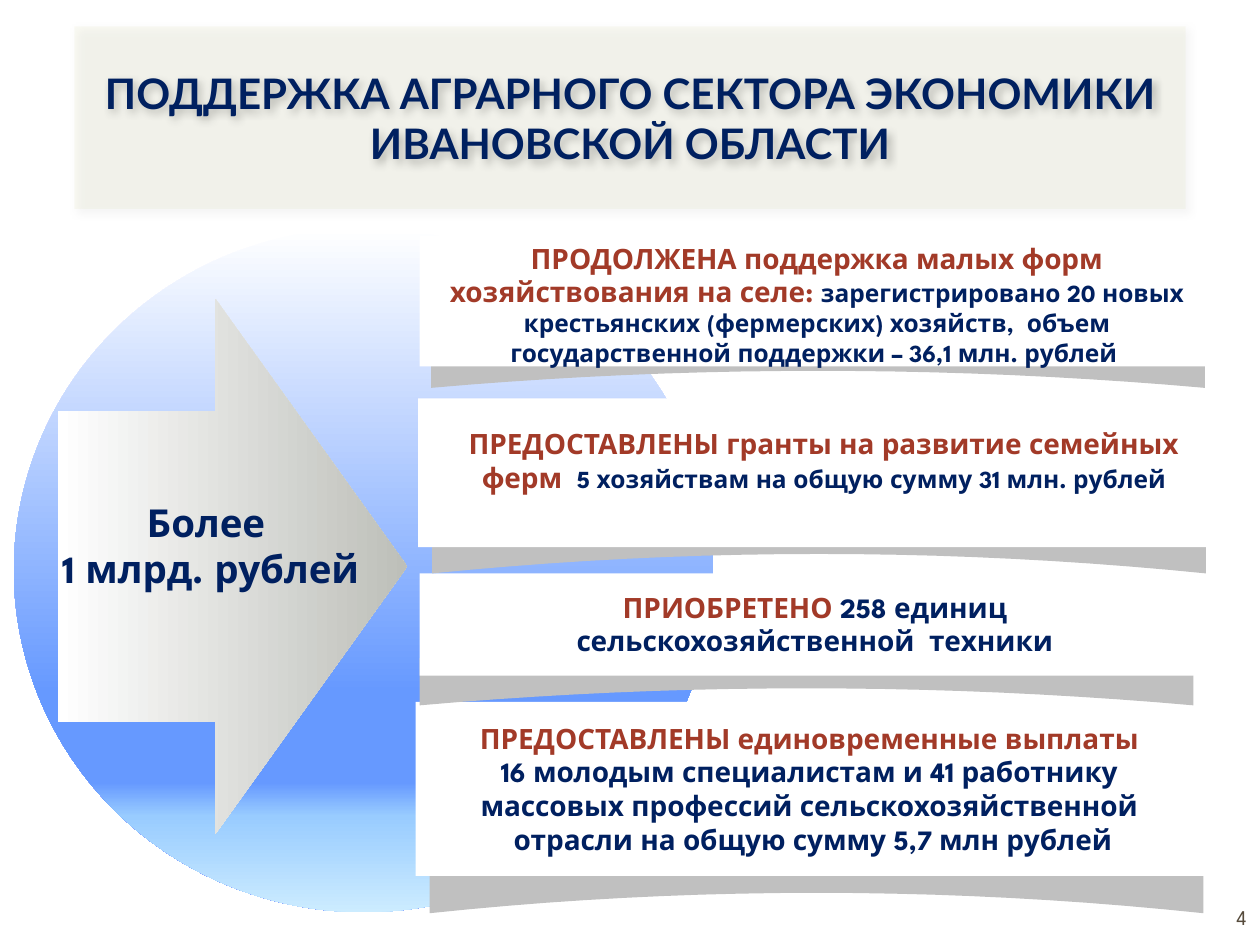
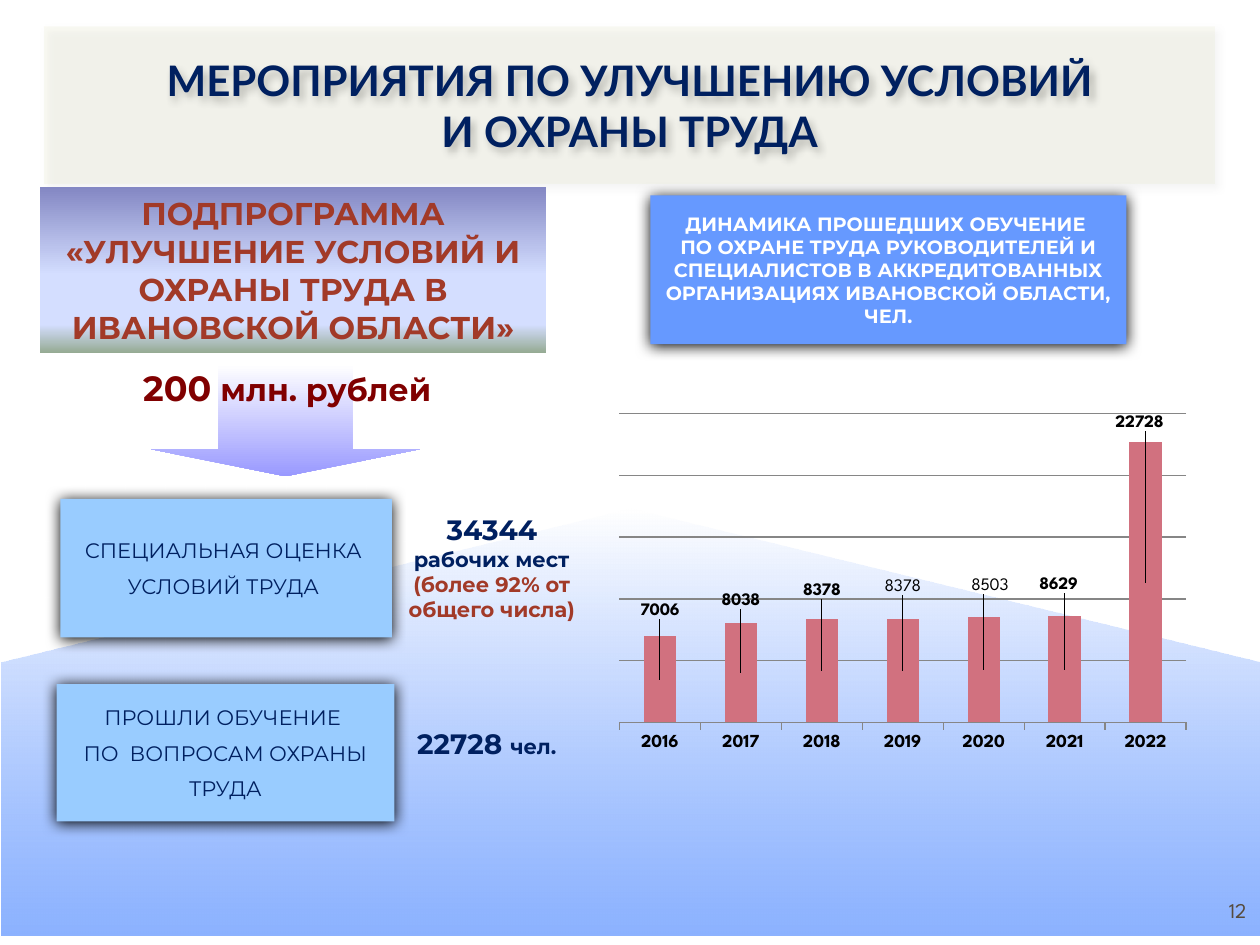
from lxml import etree
from pptx import Presentation
from pptx.chart.data import CategoryChartData
from pptx.dml.color import RGBColor
from pptx.enum.chart import XL_CHART_TYPE, XL_TICK_LABEL_POSITION, XL_TICK_MARK
from pptx.enum.shapes import MSO_SHAPE
from pptx.enum.text import MSO_ANCHOR, MSO_AUTO_SIZE, PP_ALIGN
from pptx.oxml.ns import qn
from pptx.util import Cm, Pt

RECT, OVAL, PLATE = MSO_SHAPE.RECTANGLE, MSO_SHAPE.OVAL, MSO_SHAPE.PENTAGON
RIGHT_ARROW, DOWN_ARROW = MSO_SHAPE.RIGHT_ARROW, MSO_SHAPE.DOWN_ARROW
TOP, MIDDLE = MSO_ANCHOR.TOP, MSO_ANCHOR.MIDDLE
CENTER, RIGHT = PP_ALIGN.CENTER, PP_ALIGN.RIGHT
STACKED = XL_CHART_TYPE.COLUMN_STACKED

COLORS = {
    "navy": "002060", "brick": "A23A28", "maroon": "800000", "brown": "564B3C",
    "white": "FFFFFF", "black": "000000", "silver": "C0C0C0", "grid": "868686",
    "khaki": "DFE0B1", "blue": "6699FF", "sky": "99CCFF", "ice": "CCECFF",
    "stone": "BDBFB9", "violet": "9999FF", "slate": "8488C4", "pale": "D4DEFF",
    "sage": "96AB94", "rose": "D1717F",
}

SPARTAN, MONT = "League Spartan", "Montserrat"
STYLES = {
    "title": ("Lato", 24, True, "navy"),
    "page": (SPARTAN, 12, False, "brown"),
    "lead": (SPARTAN, 16, True, "brick"),
    "fact": (SPARTAN, 16, True, "navy"),
    "detail": (SPARTAN, 14, True, "navy"),
    "total": (SPARTAN, 22, True, "navy"),
    "program": (MONT, 18, True, "brick"),
    "sum": (MONT, 20, True, "maroon"),
    "sum_unit": (MONT, 18, True, "maroon"),
    "header": (MONT, 11, True, "white"),
    "step": (MONT, 12, False, "navy"),
    "count": (MONT, 16, True, "navy"),
    "count_unit": (MONT, 12, True, "navy"),
    "count_note": (MONT, 12, True, "brick"),
}

TITLE_SHADOW = {"color": "black", "alpha": 30, "blur": 4.5, "dist": 2.6, "dir": 53}
BOX_SHADOW = {"color": "black", "alpha": 100, "blur": 8.5, "dist": 1, "dir": 90}

GLOBE = [(0, "white"), (68, "blue"), (81, "blue"), (86, "sky"), (100, "ice")]
METAL = [(0, "white"), (100, "stone")]
HILL = [(0, "blue", 75), (100, "white")]
FADE = [(0, "white"), (100, "violet")]
PROGRAM = [(0, "slate"), (53, "pale"), (83, "pale"), (100, "sage")]

AGRO = {"title": ["ПОДДЕРЖКА АГРАРНОГО СЕКТОРА ЭКОНОМИКИ ИВАНОВСКОЙ ОБЛАСТИ"],
        "title_at": (1.5, 0.53, 22.4, 3.68), "page": "4", "page_top": 17.98}
LABOUR = {"title": ["МЕРОПРИЯТИЯ ПО УЛУЧШЕНИЮ УСЛОВИЙ", "И ОХРАНЫ ТРУДА"],
          "title_at": (0.89, 0.53, 23.6, 3.18), "page": "12", "page_top": 17.83}

SHADE_WIDTH = 15.6
MEASURES = [
    {"card": (8.46, 4.75, 16, 2.64), "shade": (8.69, 6.55, SHADE_WIDTH, 1.27),
     "text": (8.33, 4.72, 16.28, 2.82),
     "paras": [[("ПРОДОЛЖЕНА поддержка малых форм хозяйствования на селе: ", "lead"),
                ("зарегистрировано 20 новых крестьянских (фермерских) хозяйств,  "
                 "объем государственной поддержки – 36,1 млн. рублей ", "detail")]]},
    {"card": (8.43, 8.03, 16.2, 3), "shade": (8.71, 10.11, SHADE_WIDTH, 1.45),
     "text": (8.71, 8.46, 15.8, 1.63),
     "paras": [[("ПРЕДОСТАВЛЕНЫ гранты на развитие семейных ферм  ", "lead"),
                ("5 хозяйствам на общую сумму 31 млн. рублей", "detail")]]},
    {"card": (8.46, 11.56, 16.03, 2.06), "shade": (8.46, 12.95, SHADE_WIDTH, 1.27),
     "text": (8.43, 11.76, 16, 1.63),
     "paras": [[("ПРИОБРЕТЕНО ", "lead"), ("258 единиц", "fact")],
               [("сельскохозяйственной  техники", "fact")]]},
    {"card": (8.38, 14.15, 16.03, 3.51), "shade": (8.66, 16.89, SHADE_WIDTH, 1.52),
     "text": (8.38, 14.41, 16.03, 2.97),
     "paras": [[("ПРЕДОСТАВЛЕНЫ единовременные выплаты ", "lead")],
               [("16 молодым специалистам и 41 работнику ", "fact")],
               [("массовых профессий сельскохозяйственной ", "fact")],
               [("отрасли на общую сумму 5,7 млн рублей", "fact")]]},
]
TOTAL = [[("Более ", "total")], [("1 млрд. рублей", "total")]]

BOXES = [
    ((13.11, 3.94, 9.6, 3), "blue", 0.25, 0,
     [[("ДИНАМИКА ПРОШЕДШИХ ОБУЧЕНИЕ ", "header")],
      [("ПО ОХРАНЕ ТРУДА РУКОВОДИТЕЛЕЙ И СПЕЦИАЛИСТОВ В АККРЕДИТОВАННЫХ "
        "ОРГАНИЗАЦИЯХ ИВАНОВСКОЙ ОБЛАСТИ, ЧЕЛ.", "header")]]),
    ((1.22, 10.06, 6.68, 2.79), "sky", 0.13, 6,
     [[("СПЕЦИАЛЬНАЯ ОЦЕНКА ", "step")], [("УСЛОВИЙ ТРУДА ", "step")]]),
    ((1.14, 13.79, 6.81, 2.77), "sky", 0.13, 6,
     [[("ПРОШЛИ ОБУЧЕНИЕ ", "step")], [("ПО  ВОПРОСАМ ОХРАНЫ", "step")],
      [("ТРУДА", "step")]]),
]
PROGRAM_NAME = [[("ПОДПРОГРАММА «УЛУЧШЕНИЕ УСЛОВИЙ И ОХРАНЫ ТРУДА "
                  "В ИВАНОВСКОЙ ОБЛАСТИ»", "program")]]
NOTES = [
    ((2.49, 7.26, 6.6, 1.12), [[("200", "sum"), (" млн. рублей", "sum_unit")]]),
    ((7.72, 10.21, 4.39, 2.49),
     [[("34344", "count")], [("рабочих мест", "count_unit")],
      [("(более 92% от общего числа)", "count_note")]]),
    ((7.72, 14.53, 4.19, 0.94), [[("22728 ", "count"), ("чел.", "count_unit")]]),
]

TRAINED = {"2016": 7006, "2017": 8038, "2018": 8378, "2019": 8378,
           "2020": 8503, "2021": 8629, "2022": 22728}
LABEL_SHIFTS = [(0, -0.17), (0, -0.18), (0, -0.2), (0, -0.21),
                (0.01, -0.21), (-0.01, -0.21), (-0.01, -0.4)]
LIGHT_LABELS = ("2019", "2020")
PLOT_LAYOUT = {"layoutTarget": "inner", "xMode": "edge", "yMode": "edge",
               "x": 0.04, "y": 0.01, "w": 0.92, "h": 0.78}


def rgb(name):
    return RGBColor.from_string(COLORS[name])


def cm(at):
    return [Cm(v) for v in at]


def add_color(parent, name, alpha=100):
    clr = etree.SubElement(parent, qn("a:srgbClr"), val=COLORS[name])
    if alpha < 100:
        etree.SubElement(clr, qn("a:alpha"), val=str(alpha * 1000))


def paint(sp, fill, angle=0):
    sp.line.fill.background()
    sp.shadow.inherit = False
    if isinstance(fill, str):
        sp.fill.solid()
        sp.fill.fore_color.rgb = rgb(fill)
        return
    sp.fill.gradient()
    sp.fill.gradient_angle = (360 - angle) % 360
    stops = sp._element.spPr.find(".//" + qn("a:gsLst"))
    for old in list(stops):
        stops.remove(old)
    for pos, *color in fill:
        add_color(etree.SubElement(stops, qn("a:gs"), pos=str(pos * 1000)), *color)


def cast_shadow(sp, shadow):
    sp.shadow.inherit = False
    effects = sp._element.spPr.find(qn("a:effectLst"))
    outer = etree.SubElement(
        effects, qn("a:outerShdw"), blurRad=str(Pt(shadow["blur"])),
        dist=str(Pt(shadow["dist"])), dir=str(shadow["dir"] * 60000),
        algn="ctr", rotWithShape="0")
    add_color(outer, shadow["color"], shadow["alpha"])


def set_font(font, name, size, bold, color):
    for key, value in {"name": name, "size": Pt(size), "bold": bold}.items():
        setattr(font, key, value)
    font.color.rgb = rgb(color)


def write(sp, paras, anchor=TOP, align=CENTER, gap=0, inset=0.25):
    tf = sp.text_frame
    frame = {"word_wrap": True, "auto_size": MSO_AUTO_SIZE.NONE,
             "vertical_anchor": anchor, "margin_left": Cm(inset),
             "margin_right": Cm(inset)}
    for key, value in frame.items():
        setattr(tf, key, value)
    for i, runs in enumerate(paras):
        p = tf.paragraphs[0] if i == 0 else tf.add_paragraph()
        p.alignment = align
        p.space_before = Pt(gap if i else 0)
        for text, style in runs:
            r = p.add_run()
            r.text = text
            set_font(r.font, *STYLES[style])


def add_shape(s, kind, at, fill, angle=0, adj=()):
    sp = s.shapes.add_shape(kind, *cm(at))
    paint(sp, fill, angle)
    for i, value in enumerate(adj):
        sp.adjustments[i] = value
    return sp


def add_text(s, at, paras, **options):
    write(s.shapes.add_textbox(*cm(at)), paras, **options)


def add_shade(s, at, steps=20):
    x, y, w, h = cm(at)
    curve = []
    for i in range(steps + 1):
        t = 1 - i / steps
        rise = 0.27 * (1 - (2 * t - 1) ** 2)
        curve.append((int(x + w * t), int(y + h * (1 - rise))))
    shoulder = int(y + h / 4)
    fb = s.shapes.build_freeform(*curve[0])
    fb.add_line_segments(curve[1:] + [(x, shoulder), (x + w // 2, y), (x + w, shoulder)])
    paint(fb.convert_to_shape(), "silver")


def add_slide(prs, page):
    s = prs.slides.add_slide(prs.slide_layouts[5])
    sp = s.shapes.title
    sp.left, sp.top, sp.width, sp.height = cm(page["title_at"])
    paint(sp, "khaki")
    clr = sp._element.spPr.find(qn("a:solidFill")).find(qn("a:srgbClr"))
    etree.SubElement(clr, qn("a:alpha"), val="14000")
    cast_shadow(sp, TITLE_SHADOW)
    write(sp, [[(line, "title")] for line in page["title"]], anchor=MIDDLE)
    add_text(s, (19.46, page["page_top"], 5.92, 1.02), [[(page["page"], "page")]],
             anchor=MIDDLE, align=RIGHT)
    return s


def set_layout(parent, index, values):
    for old in parent.findall(qn("c:layout")):
        parent.remove(old)
    layout = etree.Element(qn("c:layout"))
    manual = etree.SubElement(layout, qn("c:manualLayout"))
    for key, value in values.items():
        etree.SubElement(manual, qn("c:" + key), val=str(value))
    parent.insert(index, layout)


def add_trained_chart(s, at):
    data = CategoryChartData()
    data.categories = list(TRAINED)
    data.add_series("Series 1", list(TRAINED.values()))
    chart = s.shapes.add_chart(STACKED, *cm(at), data).chart
    chart.has_legend = chart.has_title = False
    set_font(chart.font, SPARTAN, 10, False, "black")

    cat, val = chart.category_axis, chart.value_axis
    cat.major_tick_mark = XL_TICK_MARK.OUTSIDE
    cat.tick_label_position = XL_TICK_LABEL_POSITION.LOW
    set_font(cat.tick_labels.font, SPARTAN, 10.5, True, "black")
    for key, value in {"visible": False, "has_major_gridlines": True, "minimum_scale": 0,
                       "maximum_scale": 25000, "major_unit": 5000}.items():
        setattr(val, key, value)
    for line in (cat.format.line, val.major_gridlines.format.line):
        line.color.rgb = rgb("grid")
        line.width = Pt(0.75)

    plot = chart.plots[0]
    for key, value in {"gap_width": 150, "overlap": 100, "vary_by_categories": False}.items():
        setattr(plot, key, value)
    series = plot.series[0]
    series.format.fill.solid()
    series.format.fill.fore_color.rgb = rgb("rose")
    for i, year in enumerate(TRAINED):
        set_font(series.points[i].data_label.font, SPARTAN, 10,
                 year not in LIGHT_LABELS, "black")
    for label, (x, y) in zip(series._element.iter(qn("c:dLbl")), LABEL_SHIFTS):
        set_layout(label, 1, {"x": x, "y": y})
    set_layout(chart._chartSpace.find(".//" + qn("c:plotArea")), 0, PLOT_LAYOUT)


def build_agro(prs):
    s = add_slide(prs, AGRO)
    add_shape(s, OVAL, (0.28, 4.6, 14.1, 13.79), GLOBE, 90)
    add_shape(s, RIGHT_ARROW, (1.17, 6.02, 7.04, 10.8), METAL, adj=(0.58, 0.55))
    for m in reversed(MEASURES):
        add_shade(s, m["shade"])
        add_shape(s, RECT, m["card"], "white")
        add_text(s, m["text"], m["paras"], anchor=MIDDLE)
    add_text(s, (0.71, 9.93, 7.09, 2.13), TOTAL)


def build_labour(prs):
    s = add_slide(prs, LABOUR)
    hill = add_shape(s, PLATE, (8.43, 1.85, 8.61, 25.4), HILL, adj=(0.36,))
    hill.rotation = 270
    tree = s.shapes._spTree
    tree.remove(hill._element)
    tree.insert(2, hill._element)
    add_shape(s, DOWN_ARROW, (3.05, 7.34, 5.41, 2.26), FADE, 90, (0.5, 0.24))
    program = add_shape(s, RECT, (0.81, 3.78, 10.2, 3.33), PROGRAM, 90)
    write(program, PROGRAM_NAME, anchor=MIDDLE)
    add_trained_chart(s, (11.99, 8.26, 12.42, 7.98))
    for at, fill, inset, gap, paras in BOXES:
        sp = add_shape(s, RECT, at, fill)
        cast_shadow(sp, BOX_SHADOW)
        write(sp, paras, anchor=MIDDLE, gap=gap, inset=inset)
    for at, paras in NOTES:
        add_text(s, at, paras)


def main():
    prs = Presentation()
    prs.slide_width, prs.slide_height = Cm(25.4), Cm(19.05)
    build_agro(prs)
    build_labour(prs)
    prs.save("out.pptx")


if __name__ == "__main__":
    main()
